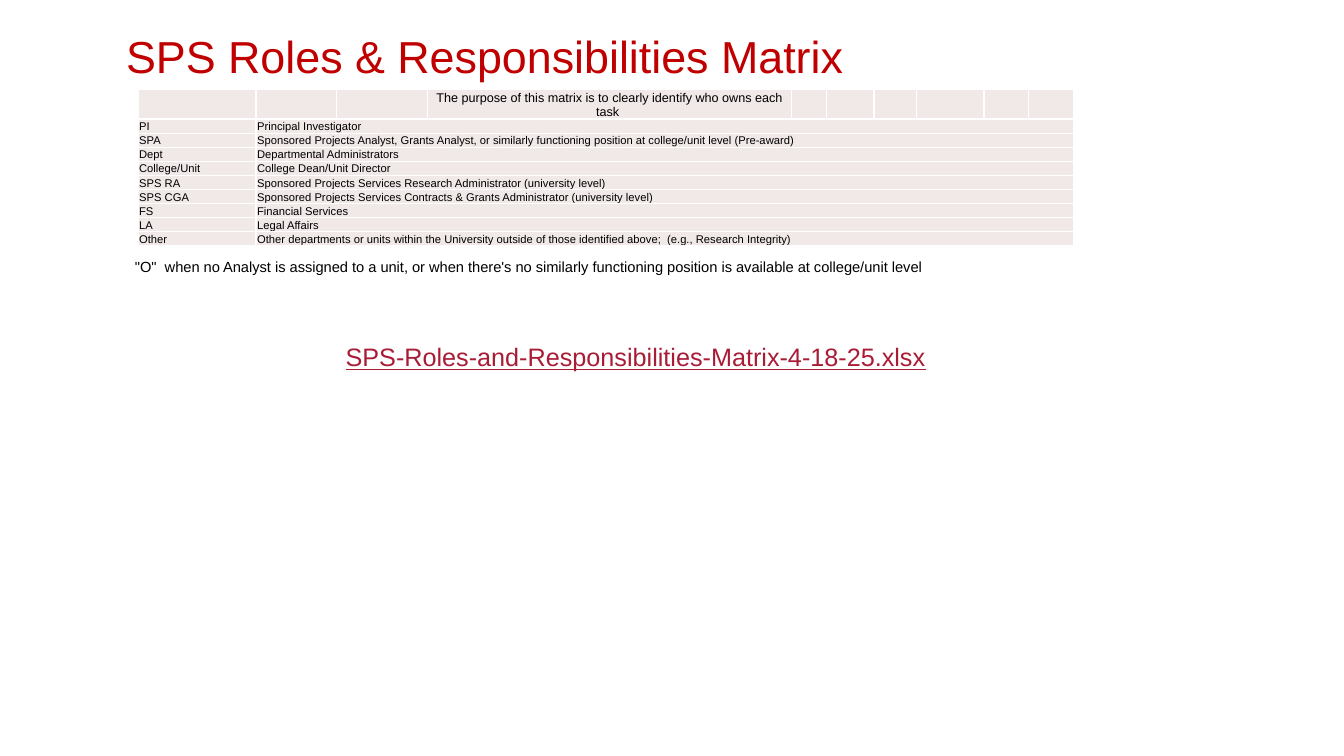
from lxml.etree import SubElement
from pptx import Presentation
from pptx.dml.color import RGBColor
from pptx.enum.text import MSO_ANCHOR as ANCHOR, MSO_AUTO_SIZE as AUTO, PP_ALIGN as ALIGN
from pptx.oxml.ns import qn
from pptx.util import Inches, Pt

RED = RGBColor(0xC0, 0x00, 0x00)
CRIMSON = RGBColor(0xA9, 0x1C, 0x36)
BLACK = RGBColor(0x00, 0x00, 0x00)
BLUSH = RGBColor(0xF1, 0xE8, 0xE8)
WHITE = RGBColor(0xFF, 0xFF, 0xFF)

COL_WIDTHS = [1.17, 0.8, 0.9, 3.61, 0.35, 0.47, 0.42, 0.67, 0.44, 0.45]
HEAD_HEIGHT, ROW_HEIGHT = 0.27, 0.14
PURPOSE = "The purpose of this matrix is to clearly identify who owns each task "
PURPOSE_COL = 3
ROLES = [
    ("PI", "Principal Investigator"),
    ("SPA", "Sponsored Projects Analyst, Grants Analyst, or similarly functioning "
            "position at college/unit level (Pre-award)"),
    ("Dept", "Departmental Administrators"),
    ("College/Unit", "College Dean/Unit Director"),
    ("SPS RA", "Sponsored Projects Services Research Administrator (university level)"),
    ("SPS CGA", "Sponsored Projects Services Contracts & Grants Administrator (university level)"),
    ("FS", "Financial Services"),
    ("LA", "Legal Affairs"),
    ("Other", "Other departments or units within the University outside of those "
              "identified above;  (e.g., Research Integrity)"),
]


def write(tf, text, size, color=BLACK, **extra):
    p = tf.paragraphs[0]
    r = p.add_run()
    r.text = text
    r.font.color.rgb = color
    for name, value in dict(name="Arial", size=Pt(size), **extra).items():
        setattr(r.font, name, value)
    return p


def add_title(slide, box, text):
    sp = slide.shapes.title
    for name, value in zip(("left", "top", "width", "height"), box):
        setattr(sp, name, Inches(value))
    tf = sp.text_frame
    tf.auto_size = AUTO.NONE
    tf.vertical_anchor = ANCHOR.MIDDLE
    p = write(tf, text, 32, RED)
    p.alignment = ALIGN.LEFT
    p.line_spacing = 0.9


def add_line(slide, box, text, size, color=BLACK, **extra):
    tf = slide.shapes.add_textbox(*map(Inches, box)).text_frame
    tf.word_wrap = True
    write(tf, text, size, color, **extra)


def format_cell(cell):
    """Give a cell thin margins, white borders, the blush fill and a small empty line."""
    margins = dict(margin_left=0.01, margin_right=0.01, margin_top=0.01, margin_bottom=0)
    for name, value in margins.items():
        setattr(cell, name, Inches(value))
    cell.vertical_anchor = ANCHOR.BOTTOM
    tcPr = cell._tc.get_or_add_tcPr()
    for side in ("a:lnL", "a:lnR", "a:lnT", "a:lnB"):
        ln = SubElement(tcPr, qn(side), w=str(Pt(1)))
        SubElement(SubElement(ln, qn("a:solidFill")), qn("a:srgbClr"), val=str(WHITE))
    cell.fill.solid()
    cell.fill.fore_color.rgb = BLUSH
    SubElement(cell.text_frame.paragraphs[0]._p, qn("a:endParaRPr"), sz="800")


def add_roles_table(slide, left, top):
    heights = [HEAD_HEIGHT] + [ROW_HEIGHT] * len(ROLES)
    size = (sum(COL_WIDTHS), sum(heights))
    table = slide.shapes.add_table(len(heights), len(COL_WIDTHS),
                                   *map(Inches, (left, top, *size))).table
    table.first_row = table.horz_banding = False
    for col, width in zip(table.columns, COL_WIDTHS):
        col.width = Inches(width)
    for row, height in zip(table.rows, heights):
        row.height = Inches(height)
    for cell in table.iter_cells():
        format_cell(cell)

    purpose = table.cell(0, PURPOSE_COL)
    purpose.vertical_anchor = ANCHOR.MIDDLE
    write(purpose.text_frame, PURPOSE, 9).alignment = ALIGN.CENTER
    for i, (role, meaning) in enumerate(ROLES, start=1):
        table.cell(i, 1).merge(table.cell(i, len(COL_WIDTHS) - 1))
        write(table.cell(i, 0).text_frame, role, 8)
        write(table.cell(i, 1).text_frame, meaning, 8)


def main():
    prs = Presentation()
    prs.slide_width, prs.slide_height = Inches(13.33), Inches(7.5)
    slide = prs.slides.add_slide(prs.slide_layouts[5])
    add_title(slide, (1.15, 0.3, 8.41, 0.58), "SPS Roles & Responsibilities Matrix")
    add_roles_table(slide, 1.37, 0.89)
    add_line(slide, (1.24, 2.51, 9.43, 0.28),
             "\"O\"  when no Analyst is assigned to a unit, or when there's no similarly "
             "functioning position is available at college/unit level", 10.5)
    add_line(slide, (3.33, 3.34, 6.67, 0.4),
             "SPS-Roles-and-Responsibilities-Matrix-4-18-25.xlsx", 18, CRIMSON, underline=True)
    prs.save("out.pptx")


if __name__ == "__main__":
    main()
